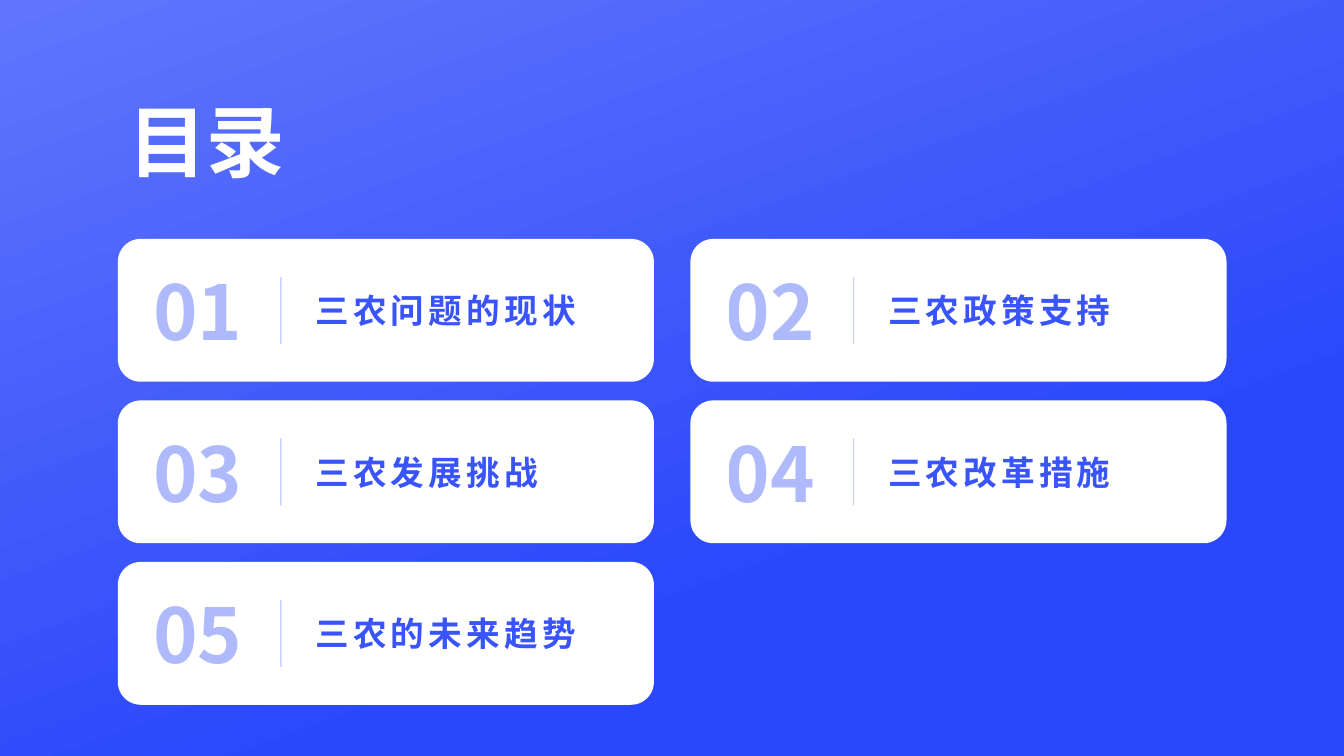
from lxml.etree import SubElement
from pptx import Presentation
from pptx.dml.color import RGBColor
from pptx.enum.shapes import MSO_CONNECTOR, MSO_SHAPE
from pptx.enum.text import MSO_ANCHOR, PP_ALIGN
from pptx.oxml.ns import qn
from pptx.util import Cm, Pt

HEADING = "目录"
CHAPTERS = [
    "三农问题的现状",
    "三农政策支持",
    "三农发展挑战",
    "三农改革措施",
    "三农的未来趋势",
]
CJK = "Noto Sans CJK SC"
BLUE, WHITE = "3954FB", "FFFFFF"
GRADIENT = [(0, "6176FC"), (0.7, "2A47FB")]

# Lengths in centimetres
COLUMNS = 2
LEFT, TOP = 2.97, 6.02
CARD_W, CARD_H = 13.51, 3.6
STEP_X, STEP_Y = 14.43, 4.07
NUMBER_X, DIVIDER_X, LABEL_X = 0.89, 4.11, 4.98
NUMBER_W, LABEL_W = 3.4, 7.62
DIVIDER_H = 1.69


def rgb(hex_color):
    return RGBColor.from_string(hex_color)


def set_alpha(fill, percent):
    """Make a solid fill partly transparent."""
    color = fill._xPr.find(qn("a:solidFill"))[0]
    SubElement(color, qn("a:alpha"), val=str(percent * 1000))


def write(frame, text, size, color, latin=CJK, spacing=0, wrap=True,
          anchor=MSO_ANCHOR.MIDDLE, align=PP_ALIGN.LEFT):
    """Write one bold run in a frame without margins and return its font."""
    frame.margin_left = frame.margin_right = 0
    frame.margin_top = frame.margin_bottom = 0
    frame.word_wrap = wrap
    frame.vertical_anchor = anchor
    paragraph = frame.paragraphs[0]
    paragraph.alignment = align
    run = paragraph.add_run()
    run.text = text
    font = run.font
    font.size, font.bold, font.name = Pt(size), True, latin
    font.color.rgb = rgb(color)
    properties = run._r.get_or_add_rPr()
    SubElement(properties, qn("a:ea"), typeface=CJK)
    if spacing:
        properties.set("spc", str(spacing * 100))
    return font


def add_card(slide, x, y):
    card = slide.shapes.add_shape(
        MSO_SHAPE.ROUNDED_RECTANGLE, Cm(x), Cm(y), Cm(CARD_W), Cm(CARD_H))
    card.adjustments[0] = 0.16
    card.shadow.inherit = False
    card.fill.solid()
    card.fill.fore_color.rgb = rgb(WHITE)
    card.line.fill.background()


def add_divider(slide, x, y):
    divider = slide.shapes.add_connector(
        MSO_CONNECTOR.STRAIGHT, Cm(x), Cm(y), Cm(x), Cm(y + DIVIDER_H))
    divider.line.width = Pt(1)
    divider.line.color.rgb = rgb(BLUE)
    set_alpha(divider.line.fill, 25)
    SubElement(divider._element.spPr, qn("a:effectLst"))


def add_chapter(slide, index, chapter):
    row, column = divmod(index, COLUMNS)
    x, y = LEFT + column * STEP_X, TOP + row * STEP_Y
    add_card(slide, x, y)
    number = slide.shapes.add_textbox(
        Cm(x + NUMBER_X), Cm(y), Cm(NUMBER_W), Cm(CARD_H))
    font = write(number.text_frame, f"{index + 1:02}", 54, BLUE, wrap=False)
    set_alpha(font.fill, 40)
    add_divider(slide, x + DIVIDER_X, y + (CARD_H - DIVIDER_H) / 2)
    label = slide.shapes.add_textbox(
        Cm(x + LABEL_X), Cm(y), Cm(LABEL_W), Cm(CARD_H))
    write(label.text_frame, chapter, 24, BLUE, spacing=3)


def main():
    prs = Presentation()
    prs.slide_width, prs.slide_height = Cm(33.87), Cm(19.05)
    slide = prs.slides.add_slide(prs.slide_layouts[5])

    backdrop = slide.background.fill
    backdrop.gradient()
    backdrop.gradient_angle = 290  # counter-clockwise
    for stop, (position, color) in zip(backdrop.gradient_stops, GRADIENT):
        stop.position = position
        stop.color.rgb = rgb(color)

    title = slide.shapes.title
    title.left, title.top = Cm(2.34), Cm(1.14)
    title.width, title.height = Cm(4.85), Cm(3.58)
    write(title.text_frame, HEADING, 56, WHITE, latin="Arial",
          anchor=MSO_ANCHOR.BOTTOM, align=PP_ALIGN.RIGHT)

    for index, chapter in enumerate(CHAPTERS):
        add_chapter(slide, index, chapter)
    prs.save("out.pptx")


if __name__ == "__main__":
    main()
